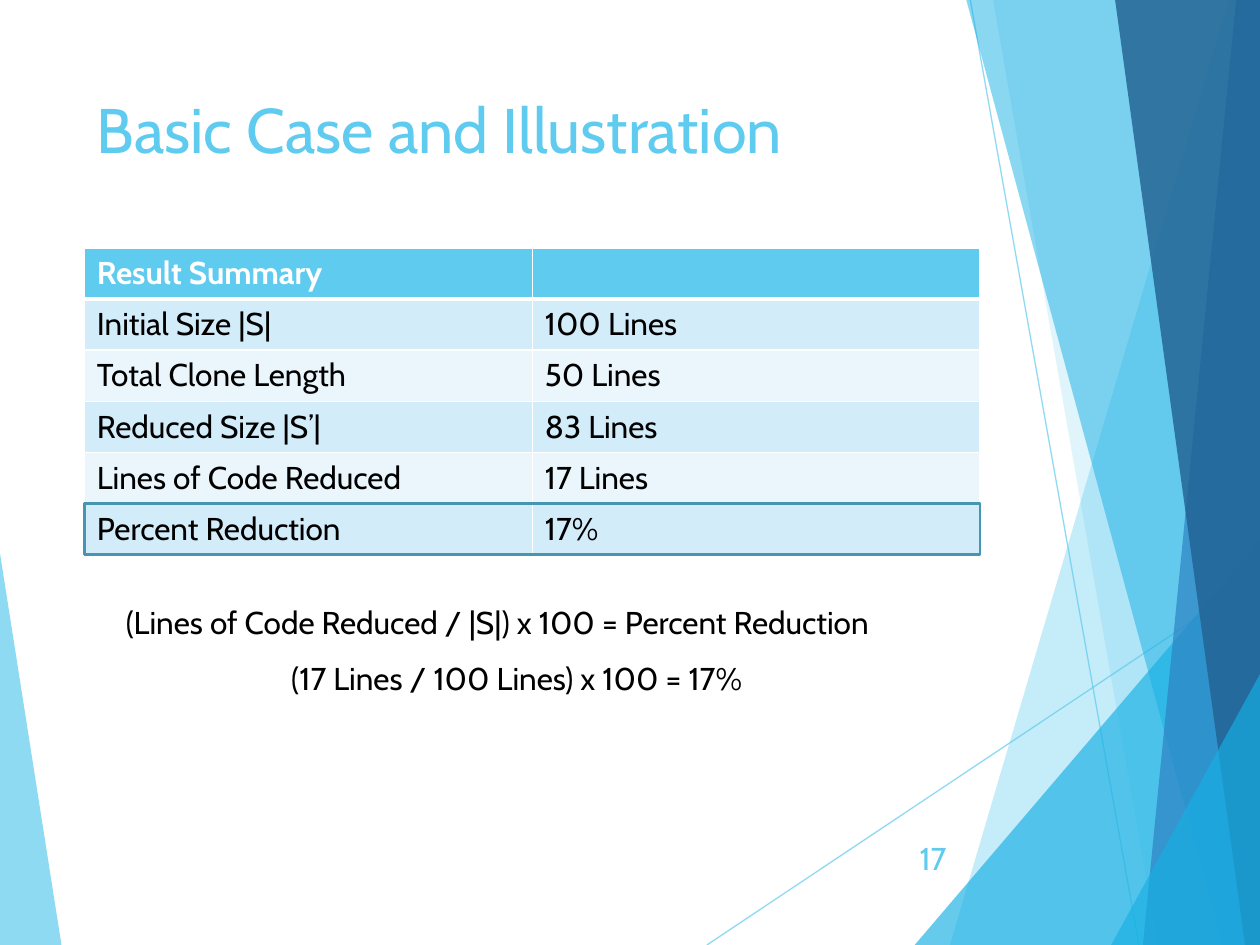
from dataclasses import dataclass

from lxml import etree
from pptx import Presentation
from pptx.dml.color import RGBColor
from pptx.enum import shapes, text
from pptx.oxml.ns import qn
from pptx.util import Cm, Pt


@dataclass(frozen=True)
class Theme:
    font: str = "Cabin"
    title_size: int = 36
    body_size: int = 18
    sky: str = "5FCBEF"
    cyan: str = "17B0E4"
    blue: str = "2E83C3"
    navy: str = "226292"
    outline: str = "4696B1"
    band_dark: str = "D2ECF9"
    band_light: str = "EAF6FC"
    ink: str = "000000"
    paper: str = "FFFFFF"


THEME = Theme()
WIDTH, HEIGHT = 25.4, 19.05
TABLE_BOX = (1.7, 5, 18.06, 6.18)
RESULTS = [
    ("Result Summary", ""),
    ("Initial Size |S|", "100 Lines"),
    ("Total Clone Length", "50 Lines"),
    ("Reduced Size |S’|", "83 Lines"),
    ("Lines of Code Reduced", "17 Lines"),
    ("Percent Reduction", "17%"),
]


def set_all(target, values):
    for name, value in values.items():
        setattr(target, name, value)


def style_run(paragraph, content, color, size=THEME.body_size, bold=False):
    run = paragraph.add_run()
    run.text = content
    set_all(run.font, {"name": THEME.font, "size": Pt(size), "bold": bold})
    run.font.color.rgb = RGBColor.from_string(color)


def set_alpha(paint, percent):
    color = paint._xPr.find(qn("a:solidFill"))[0]
    etree.SubElement(color, qn("a:alpha"), val=str(percent * 1000))


def add_facet(slide, points, color, opacity):
    corners = [(Cm(x), Cm(y)) for x, y in points]
    builder = slide.shapes.build_freeform(*corners[0])
    builder.add_line_segments(corners[1:], close=True)
    facet = builder.convert_to_shape()
    facet.shadow.inherit = False
    facet.line.fill.background()
    facet.fill.solid()
    facet.fill.fore_color.rgb = RGBColor.from_string(color)
    set_alpha(facet.fill, opacity)


def add_ray(slide, start, end):
    ray = slide.shapes.add_connector(
        shapes.MSO_CONNECTOR.STRAIGHT, *(Cm(v) for v in start + end))
    ray.line.width = Pt(0.75)
    ray.line.color.rgb = RGBColor.from_string(THEME.sky)
    set_alpha(ray.line.fill, 70)
    etree.SubElement(ray._element.spPr, qn("a:effectLst"))


def add_backdrop(slide, box):
    left, top, width, height = box
    right, bottom = left + width, top + height
    add_facet(slide, [(left, top + 11.15), (left + 1.24, bottom), (left, bottom)],
              THEME.sky, 70)
    add_ray(slide, (left + 14.25, bottom), (right, top + 11.61))
    add_ray(slide, (left + 19.56, top), (left + 22.96, bottom))
    facets = [
        (24.77, 0, 19.15, THEME.sky, 36),
        (20.02, 0, 23.34, THEME.sky, 20),
        (width, 10.9, 18.44, THEME.cyan, 66),
        (19.48, 0, 24.64, THEME.cyan, 50),
        (24.92, 0, 23.04, THEME.blue, 70),
        (22.48, 0, 25.1, THEME.navy, 82),
        (width, 13.59, 22.4, THEME.cyan, 66),
    ]
    for peak, drop, foot, color, opacity in facets:
        add_facet(slide, [(left + peak, top + drop), (left + foot, bottom),
                          (right, bottom), (right, top + drop)], color, opacity)


def add_label(slide, box, content, color, size=THEME.body_size,
              align=text.PP_ALIGN.LEFT, anchor=text.MSO_ANCHOR.TOP, wrap=True):
    frame = slide.shapes.add_textbox(*map(Cm, box)).text_frame
    set_all(frame, {"word_wrap": wrap, "vertical_anchor": anchor})
    frame.paragraphs[0].alignment = align
    style_run(frame.paragraphs[0], content, color, size)


def set_borders(cell, bottom_width, top_width):
    properties = cell._tc.get_or_add_tcPr()
    widths = {"a:lnL": 1, "a:lnR": 1, "a:lnT": top_width, "a:lnB": bottom_width}
    for side, width in widths.items():
        edge = etree.SubElement(properties, qn(side), w=str(Pt(width)))
        fill = etree.SubElement(edge, qn("a:solidFill"))
        etree.SubElement(fill, qn("a:srgbClr"), val=THEME.paper)


def add_results(slide, box):
    left, top, width, height = box
    row_count, column_count = len(RESULTS), len(RESULTS[0])
    results = slide.shapes.add_table(row_count, column_count, *map(Cm, box)).table
    for column in results.columns:
        column.width = Cm(width / column_count)
    for index, entries in enumerate(RESULTS):
        header = index == 0
        band = THEME.band_dark if index % 2 else THEME.band_light
        results.rows[index].height = Cm(height / row_count)
        for cell, content in zip(results.rows[index].cells, entries):
            set_borders(cell, 3 if header else 1, 3 if index == 1 else 1)
            cell.fill.solid()
            cell.fill.fore_color.rgb = RGBColor.from_string(
                THEME.sky if header else band)
            if content:
                style_run(cell.text_frame.paragraphs[0], content,
                          THEME.paper if header else THEME.ink, bold=header)


def add_highlight(slide, box):
    left, top, width, height = box
    row_height = height / len(RESULTS)
    highlight = slide.shapes.add_shape(
        shapes.MSO_SHAPE.RECTANGLE, Cm(left), Cm(top + height - row_height),
        Cm(width), Cm(row_height))
    highlight.shadow.inherit = False
    highlight.fill.background()
    highlight.line.width = Pt(1.5)
    highlight.line.color.rgb = RGBColor.from_string(THEME.outline)


def add_formulas(slide, box):
    left, top, width, height = box
    add_label(slide, (left, top, width, 1.02),
              "(Lines of Code Reduced / |S|) x 100 = Percent Reduction",
              THEME.ink, wrap=False)
    add_label(slide, (left + 3.33, top + height - 1.02, 10.21, 1.02),
              "(17 Lines / 100 Lines) x 100 = 17%", THEME.ink, wrap=False)


def main():
    deck = Presentation()
    set_all(deck, {"slide_width": Cm(WIDTH), "slide_height": Cm(HEIGHT)})
    slide = deck.slides.add_slide(deck.slide_layouts[6])
    add_backdrop(slide, (0, 0, WIDTH, HEIGHT))
    add_label(slide, (1.7, 1.7, 17.63, 3.66), "Basic Case and Illustration",
              THEME.sky, THEME.title_size)
    add_results(slide, TABLE_BOX)
    add_label(slide, (17.91, 16.79, 1.42, 1.02), "17", THEME.sky,
              align=text.PP_ALIGN.RIGHT, anchor=text.MSO_ANCHOR.MIDDLE)
    add_highlight(slide, TABLE_BOX)
    add_formulas(slide, (2.29, 12.04, 16.87, 2.14))
    deck.save("out.pptx")


if __name__ == "__main__":
    main()
